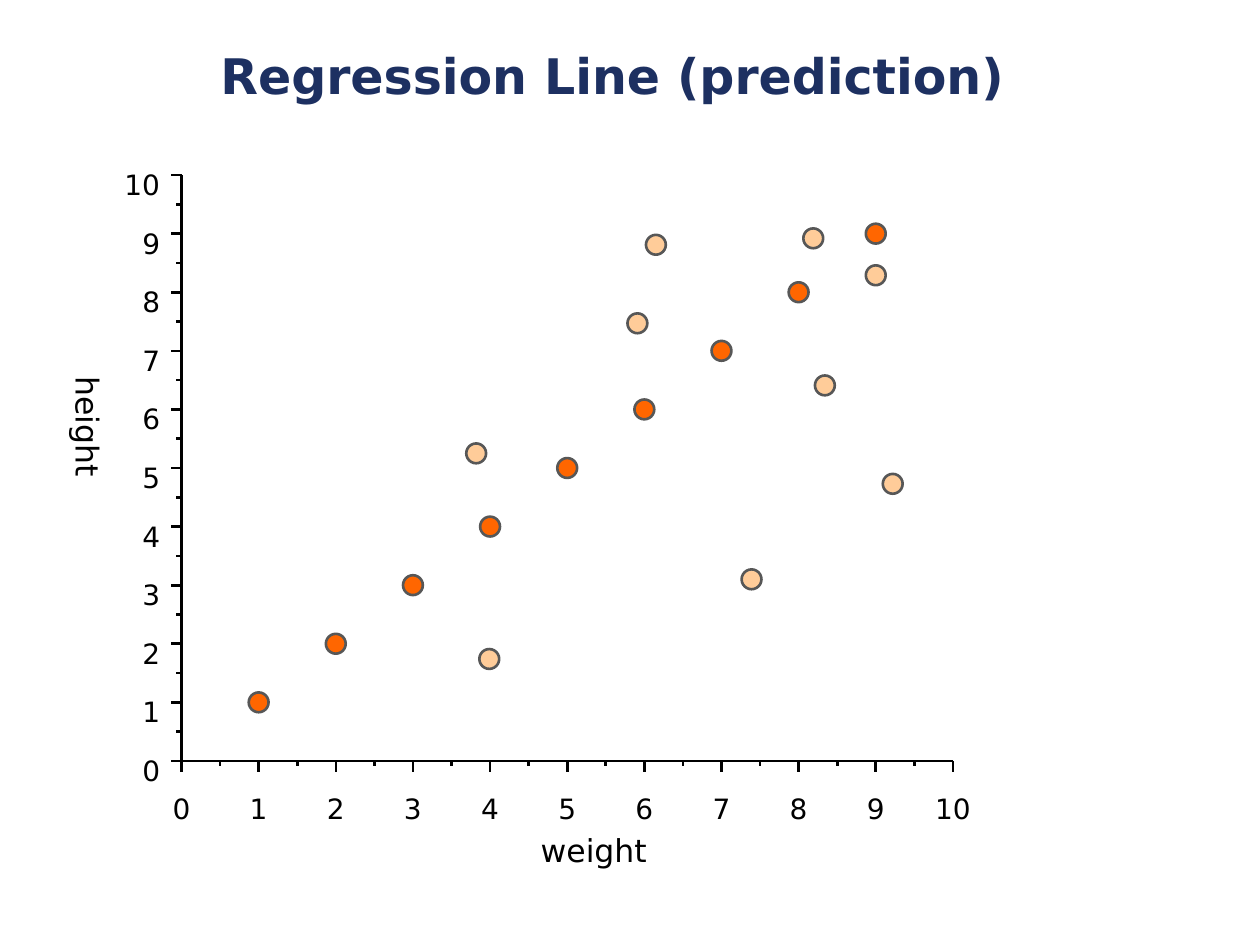
from lxml import etree
from pptx import Presentation
from pptx.dml.color import RGBColor
from pptx.enum.shapes import MSO_CONNECTOR, MSO_SHAPE
from pptx.enum.text import MSO_ANCHOR, MSO_AUTO_SIZE, PP_ALIGN
from pptx.oxml.ns import qn
from pptx.util import Cm, Pt

STRAIGHT = MSO_CONNECTOR.STRAIGHT
OVAL = MSO_SHAPE.OVAL
MIDDLE = MSO_ANCHOR.MIDDLE
LEFT = PP_ALIGN.LEFT
NO_AUTOFIT = MSO_AUTO_SIZE.NONE

NAVY = RGBColor(0x1D, 0x30, 0x61)
BLACK = RGBColor(0, 0, 0)
GREY = RGBColor(0x57, 0x57, 0x57)
ORANGE = RGBColor(0xFF, 0x66, 0x00)
PEACH = RGBColor(0xFF, 0xCC, 0x99)
FONT = "DejaVu Sans"

# Content: (weight, height) pairs
TITLE = "Regression Line (prediction)"
X_TITLE, Y_TITLE = "weight", "height"
AXIS_MAX = 10
PREDICTED = [(value, value) for value in range(1, 10)]
OBSERVED = [
    (9.22, 4.73), (3.99, 1.74), (3.82, 5.25),
    (5.91, 7.47), (7.39, 3.1), (8.34, 6.41),
    (6.15, 8.81), (8.19, 8.92), (9, 8.29),
]

# Plot geometry in centimetres
ORIGIN_X, ORIGIN_Y = 3.66, 15.34
UNIT_X, UNIT_Y = 15.55 / AXIS_MAX, 11.81 / AXIS_MAX
MAJOR_TICK, MINOR_TICK = 0.22, 0.11
DIGIT_WIDTH, LABEL_HEIGHT = 0.36, 0.66
Y_LABEL_RIGHT, X_LABEL_TOP = 3.23, 15.95
DOT = 0.4


def plot_x(value):
    return ORIGIN_X + value * UNIT_X


def plot_y(value):
    return ORIGIN_Y - value * UNIT_Y


def style_text(para, size, color, bold=False):
    para.alignment = LEFT
    para.font.name = FONT
    para.font.size = Pt(size)
    para.font.bold = bold
    para.font.color.rgb = color


def add_label(page, text, left, top, width, height, size, wrap=False):
    box = page.shapes.add_textbox(Cm(left), Cm(top), Cm(width), Cm(height))
    frame = box.text_frame
    frame.margin_left = frame.margin_right = 0
    frame.margin_top = frame.margin_bottom = 0
    frame.word_wrap = wrap
    frame.text = text
    style_text(frame.paragraphs[0], size, BLACK)
    return box


def add_line(page, x1, y1, x2, y2):
    line = page.shapes.add_connector(STRAIGHT, Cm(x1), Cm(y1), Cm(x2), Cm(y2))
    line.line.color.rgb = BLACK
    line.line.width = Pt(1.5)
    etree.SubElement(line._element.spPr, qn("a:effectLst"))


def add_dots(page, points, color):
    for weight, height in points:
        dot = page.shapes.add_shape(
            OVAL, Cm(plot_x(weight) - DOT / 2), Cm(plot_y(height) - DOT / 2),
            Cm(DOT), Cm(DOT))
        dot.shadow.inherit = False
        dot.fill.solid()
        dot.fill.fore_color.rgb = color
        dot.line.color.rgb = GREY
        dot.line.width = Pt(1.5)


def add_axes(page):
    # Ticks at every half unit, longer on whole units
    for step in range(2 * AXIS_MAX + 1):
        x, y = plot_x(step / 2), plot_y(step / 2)
        tick = MINOR_TICK if step % 2 else MAJOR_TICK
        add_line(page, ORIGIN_X, y, ORIGIN_X - tick, y)
        add_line(page, x, ORIGIN_Y, x, ORIGIN_Y + tick)

    # Numbers on whole units
    for value in range(AXIS_MAX + 1):
        text = str(value)
        width = DIGIT_WIDTH * len(text)
        add_label(page, text, Y_LABEL_RIGHT - width, plot_y(value) - 0.15,
                  width, LABEL_HEIGHT, 16)
        add_label(page, text, plot_x(value) - width / 2, X_LABEL_TOP,
                  width, LABEL_HEIGHT, 16)

    # Axis lines and their titles
    add_line(page, ORIGIN_X, ORIGIN_Y, plot_x(AXIS_MAX), ORIGIN_Y)
    add_line(page, ORIGIN_X, ORIGIN_Y, ORIGIN_X, plot_y(AXIS_MAX))
    add_label(page, X_TITLE, 10.9, 16.76, 3.68, 0.69, 18, wrap=True)
    y_title = add_label(page, Y_TITLE, 1.4, 7.59, 0.76, 3.05, 18, wrap=True)
    y_title.text_frame._txBody.bodyPr.set("vert", "vert")


def main():
    deck = Presentation()
    deck.slide_width, deck.slide_height = Cm(25.4), Cm(19.05)
    page = deck.slides.add_slide(deck.slide_layouts[5])

    # Title
    title = page.shapes.title
    title.left, title.top = Cm(4.19), Cm(0.2)
    title.width, title.height = Cm(17.4), Cm(2.62)
    title.text_frame.text = TITLE
    title.text_frame.auto_size = NO_AUTOFIT
    title.text_frame.vertical_anchor = MIDDLE
    style_text(title.text_frame.paragraphs[0], 28, NAVY, bold=True)

    # Scatter plot
    add_axes(page)
    add_dots(page, PREDICTED, ORANGE)
    add_dots(page, OBSERVED, PEACH)

    deck.save("out.pptx")


if __name__ == "__main__":
    main()
